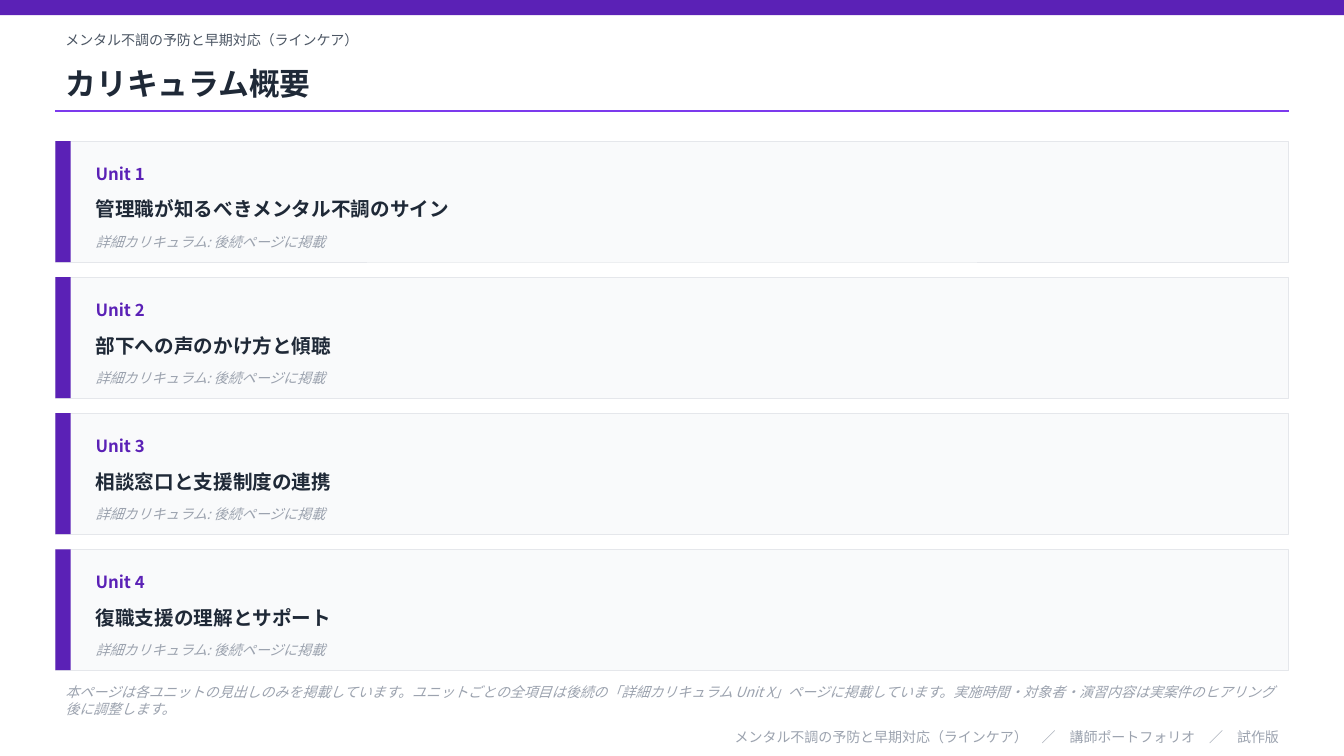
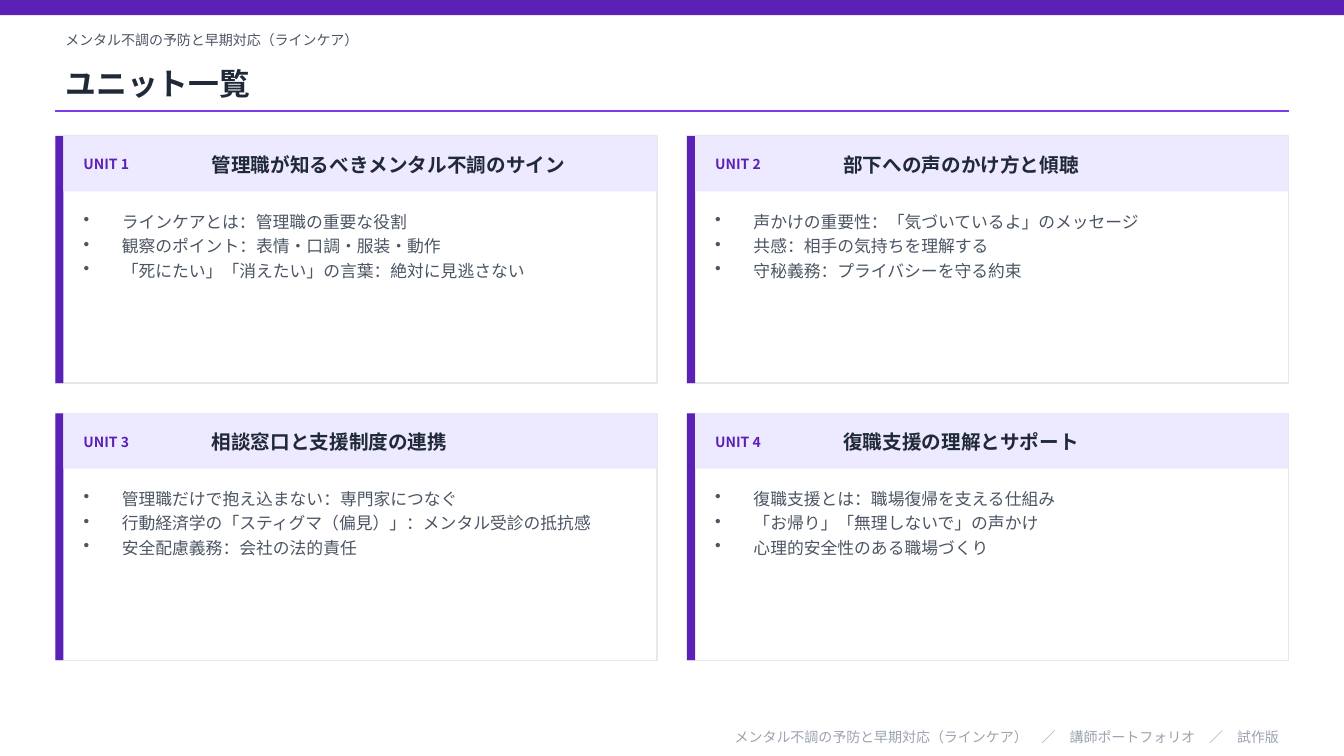
from pptx import Presentation
from pptx.dml.color import RGBColor
from pptx.enum.shapes import MSO_CONNECTOR, MSO_SHAPE
from pptx.enum.text import MSO_ANCHOR, MSO_AUTO_SIZE, PP_ALIGN
from pptx.oxml.ns import qn
from pptx.util import Inches, Pt
from lxml import etree

COURSE = "メンタル不調の予防と早期対応（ラインケア）"
FOOTER = COURSE + "　／　講師ポートフォリオ　／　試作版"
OVERVIEW_TITLE = "カリキュラム概要"
UNITS_TITLE = "ユニット一覧"
DETAIL = "詳細カリキュラム: 後続ページに掲載"
NOTE = (
    "本ページは各ユニットの見出しのみを掲載しています。"
    "ユニットごとの全項目は後続の「詳細カリキュラム Unit X」ページに掲載しています。"
    "実施時間・対象者・演習内容は実案件のヒアリング後に調整します。"
)
UNITS = [
    ("管理職が知るべきメンタル不調のサイン", [
        "ラインケアとは：管理職の重要な役割",
        "観察のポイント：表情・口調・服装・動作",
        "「死にたい」「消えたい」の言葉：絶対に見逃さない",
    ]),
    ("部下への声のかけ方と傾聴", [
        "声かけの重要性：「気づいているよ」のメッセージ",
        "共感：相手の気持ちを理解する",
        "守秘義務：プライバシーを守る約束",
    ]),
    ("相談窓口と支援制度の連携", [
        "管理職だけで抱え込まない：専門家につなぐ",
        "行動経済学の「スティグマ（偏見）」：メンタル受診の抵抗感",
        "安全配慮義務：会社の法的責任",
    ]),
    ("復職支援の理解とサポート", [
        "復職支援とは：職場復帰を支える仕組み",
        "「お帰り」「無理しないで」の声かけ",
        "心理的安全性のある職場づくり",
    ]),
]

FONT = "Noto Sans CJK JP"
PURPLE = RGBColor(0x5B, 0x21, 0xB6)
VIOLET = RGBColor(0x7C, 0x3A, 0xED)
LAVENDER = RGBColor(0xED, 0xE9, 0xFE)
INK = RGBColor(0x1F, 0x29, 0x37)
SLATE = RGBColor(0x4B, 0x55, 0x63)
MUTED = RGBColor(0x9C, 0xA3, 0xAF)
BORDER = RGBColor(0xE5, 0xE7, 0xEB)
PALE = RGBColor(0xF9, 0xFA, 0xFB)
WHITE = RGBColor(0xFF, 0xFF, 0xFF)

RECTANGLE = MSO_SHAPE.RECTANGLE
STRAIGHT = MSO_CONNECTOR.STRAIGHT
TOP, MIDDLE = MSO_ANCHOR.TOP, MSO_ANCHOR.MIDDLE
LEFT, RIGHT = PP_ALIGN.LEFT, PP_ALIGN.RIGHT

PAGE_W, PAGE_H = 13.33, 7.5
MARGIN = 0.55
CONTENT_W = PAGE_W - 2 * MARGIN
BULLET_INDENT = 0.38


def inches(*lengths):
    return [Inches(length) for length in lengths]


def add_panel(page, left, top, width, height, fill, border_width=None):
    panel = page.shapes.add_shape(RECTANGLE, *inches(left, top, width, height))
    panel.shadow.inherit = False
    panel.fill.solid()
    panel.fill.fore_color.rgb = fill
    if border_width:
        panel.line.color.rgb = BORDER
        panel.line.width = Pt(border_width)
    else:
        panel.line.fill.background()


def add_bullet(para):
    """Give the paragraph a hanging round bullet."""
    properties = para._p.get_or_add_pPr()
    properties.set("marL", str(Inches(BULLET_INDENT)))
    properties.set("indent", str(-Inches(BULLET_INDENT)))
    etree.SubElement(properties, qn("a:buChar")).set("char", "•")
    para.space_after = Pt(3)


def write(box, lines, size, color, bold=False, italic=False,
          align=LEFT, anchor=MIDDLE, bullets=False):
    frame = box.text_frame
    frame.word_wrap = True
    frame.auto_size = MSO_AUTO_SIZE.NONE
    frame.vertical_anchor = anchor
    for index, line in enumerate(lines):
        para = frame.add_paragraph() if index else frame.paragraphs[0]
        para.alignment = align
        if bullets:
            add_bullet(para)
        span = para.add_run()
        span.text = line
        span.font.name = FONT
        span.font.size = Pt(size)
        span.font.color.rgb = color
        span.font.bold = bold
        span.font.italic = italic


def add_text(page, left, top, width, height, lines, size, color, **style):
    box = page.shapes.add_textbox(*inches(left, top, width, height))
    write(box, lines, size, color, **style)


def add_page(deck, title):
    """Add a slide with the shared band, course name, title, rule and footer."""
    page = deck.slides.add_slide(deck.slide_layouts[5])
    add_panel(page, 0, 0, PAGE_W, 0.15, PURPLE)
    add_text(page, MARGIN, 0.25, CONTENT_W, 0.3, [COURSE], 10, SLATE)
    heading = page.shapes.title
    heading.left, heading.top, heading.width, heading.height = inches(
        MARGIN, 0.55, CONTENT_W, 0.55)
    write(heading, [title], 22, INK, bold=True)
    rule = page.shapes.add_connector(
        STRAIGHT, *inches(MARGIN, 1.1, MARGIN + CONTENT_W, 1.1))
    rule.line.color.rgb = VIOLET
    rule.line.width = Pt(1)
    etree.SubElement(rule._element.spPr, qn("a:effectLst"))
    add_text(page, MARGIN, 7.2, CONTENT_W, 0.22, [FOOTER], 10, MUTED, align=RIGHT)
    return page


def add_overview(deck):
    page = add_page(deck, OVERVIEW_TITLE)
    row_h, gap = 1.2, 0.15
    text_left = MARGIN + 0.3
    text_w = CONTENT_W - 0.5
    for index, (name, _) in enumerate(UNITS):
        top = 1.4 + index * (row_h + gap)
        add_panel(page, MARGIN, top, CONTENT_W, row_h, PALE, 0.5)
        add_panel(page, MARGIN, top, 0.15, row_h, PURPLE)
        add_text(page, text_left, top + 0.12, 1.5, 0.4,
                 [f"Unit {index + 1}"], 12, PURPLE, bold=True)
        add_text(page, text_left, top + 0.45, text_w, 0.45, [name], 14, INK, bold=True)
        add_text(page, text_left, top + 0.85, text_w, 0.3, [DETAIL], 10, MUTED, italic=True)
    add_text(page, MARGIN, 6.75, CONTENT_W, 0.4, [NOTE], 10, MUTED, italic=True)


def add_unit_cards(deck):
    page = add_page(deck, UNITS_TITLE)
    columns, gap, bar_w = 2, 0.3, 0.08
    card_w = (CONTENT_W - gap * (columns - 1)) / columns
    card_h = 2.45
    for index, (name, topics) in enumerate(UNITS):
        row, column = divmod(index, columns)
        left = MARGIN + column * (card_w + gap)
        top = 1.35 + row * (card_h + gap)
        text_left = left + 0.18
        add_panel(page, left, top, card_w, card_h, WHITE, 1)
        add_panel(page, left, top, bar_w, card_h, PURPLE)
        add_panel(page, left + bar_w, top, card_w - bar_w, 0.55, LAVENDER)
        add_text(page, text_left, top + 0.08, 1.2, 0.4,
                 [f"UNIT {index + 1}"], 10, PURPLE, bold=True)
        add_text(page, left + 1.45, top + 0.08, card_w - 1.6, 0.4,
                 [name], 14, INK, bold=True)
        add_text(page, text_left, top + 0.7, card_w - 0.36, 1.6,
                 topics, 12, SLATE, anchor=TOP, bullets=True)


def main():
    deck = Presentation()
    deck.slide_width, deck.slide_height = inches(PAGE_W, PAGE_H)
    add_overview(deck)
    add_unit_cards(deck)
    deck.save("out.pptx")


if __name__ == "__main__":
    main()
